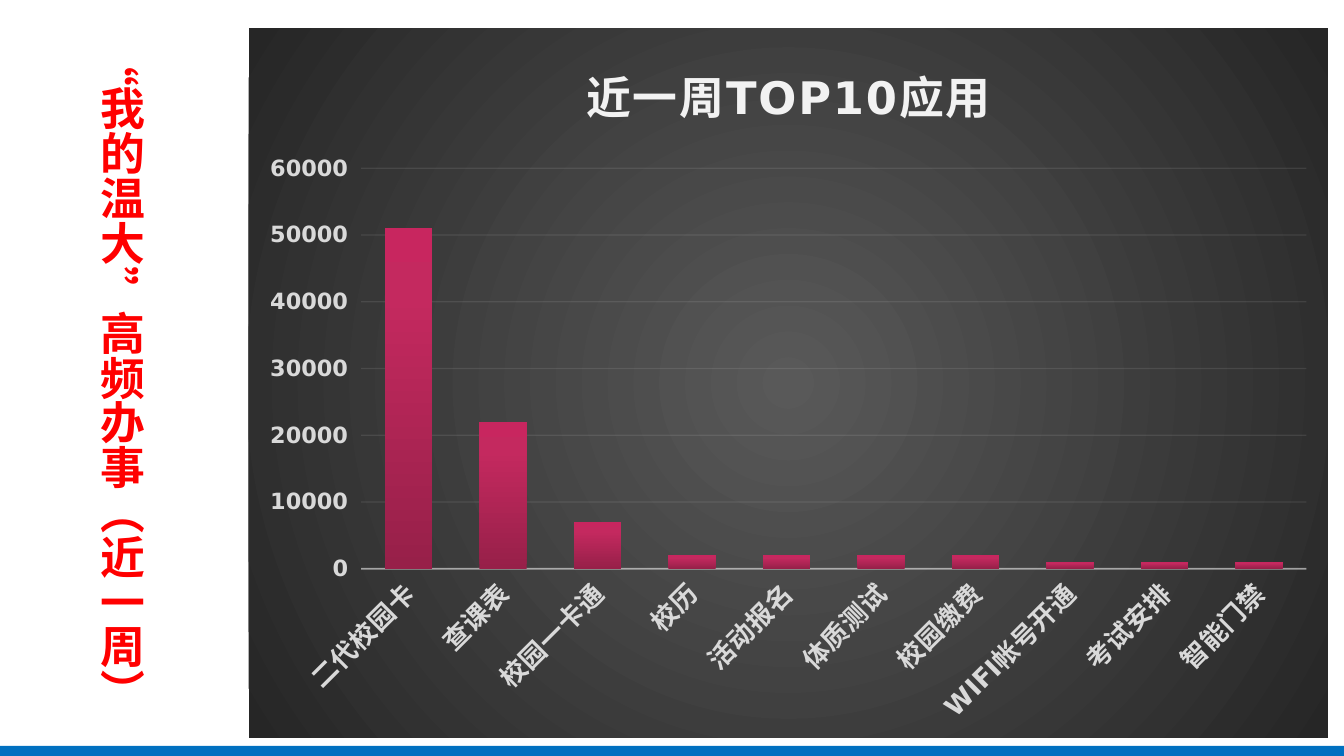
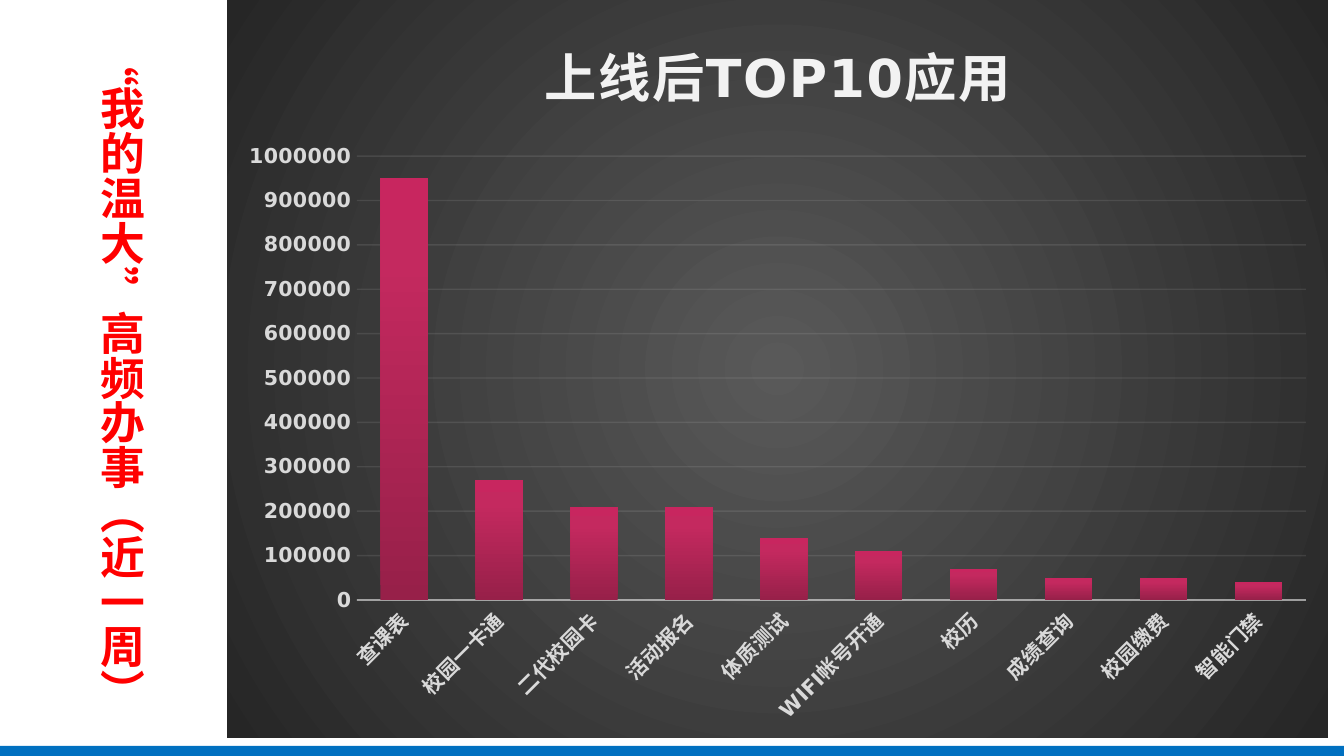
from lxml import etree
from pptx import Presentation
from pptx.chart.data import CategoryChartData
from pptx.dml.color import RGBColor
from pptx.enum.chart import XL_CHART_TYPE as ChartType, XL_TICK_MARK as TickMark
from pptx.enum.shapes import MSO_SHAPE as Preset
from pptx.enum.text import MSO_AUTO_SIZE as AutoSize
from pptx.oxml.ns import qn
from pptx.util import Pt

FONT = "DejaVu Sans"
BLUE, RED = "0070C0", "FF0000"
LIGHT, LABEL = "F2F2F2", "D9D9D9"
PANEL_STOPS = [(0, "595959"), (100, "262626")]
BAR_STOPS = [(0, "972049"), (80, "C4295F"), (100, "C8265F")]
SIDE_TITLE = "“我的温大”高频办事（近一周）"

CHARTS = [
    {
        "title": "近一周TOP10应用", "title_size": 24,
        "place": (133.2, 15.1, 578.2, 380.2),
        "category_size": 14, "value_size": 12,
        "maximum": 60000, "unit": 10000, "format": "0_ ",
        "apps": [("二代校园卡", 51000), ("查课表", 22000), ("校园一卡通", 7000),
                 ("校历", 2000), ("活动报名", 2000), ("体质测试", 2000),
                 ("校园缴费", 2000), ("WIFI帐号开通", 1000),
                 ("考试安排", 1000), ("智能门禁", 1000)],
    },
    {
        "title": "上线后TOP10应用", "title_size": 28,
        "place": (121.7, 0, 589.7, 395.3),
        "category_size": 11, "value_size": 11,
        "maximum": 1000000, "unit": 100000, "format": "General",
        "apps": [("查课表", 950000), ("校园一卡通", 270000), ("二代校园卡", 210000),
                 ("活动报名", 210000), ("体质测试", 140000), ("WIFI帐号开通", 110000),
                 ("校历", 70000), ("成绩查询", 50000),
                 ("校园缴费", 50000), ("智能门禁", 40000)],
    },
]


def color(value):
    return RGBColor.from_string(value)


def add_gradient(properties, stops, angle=None):
    gradient = etree.SubElement(properties, qn("a:gradFill"), rotWithShape="1")
    stop_list = etree.SubElement(gradient, qn("a:gsLst"))
    for position, value in stops:
        stop = etree.SubElement(stop_list, qn("a:gs"), pos=str(position * 1000))
        etree.SubElement(stop, qn("a:srgbClr"), val=value)
    if angle is None:
        shade = etree.SubElement(gradient, qn("a:path"), path="circle")
        center = {side: "50000" for side in "ltrb"}
        etree.SubElement(shade, qn("a:fillToRect"), **center)
    else:
        etree.SubElement(gradient, qn("a:lin"), ang=str(angle * 60000), scaled="0")


presentation = Presentation()
presentation.slide_width, presentation.slide_height = Pt(720), Pt(405)

for details in CHARTS:
    slide = presentation.slides.add_slide(presentation.slide_layouts[6])

    band = slide.shapes.add_shape(Preset.RECTANGLE, 0, Pt(399.6), Pt(720), Pt(5.4))
    band.shadow.inherit = False
    band.fill.solid()
    band.fill.fore_color.rgb = color(BLUE)
    band.line.fill.background()

    side_box = slide.shapes.add_textbox(Pt(37.4), Pt(15.1), Pt(43.9), Pt(391))
    text_frame = side_box.text_frame
    text_frame.word_wrap = True
    text_frame.auto_size = AutoSize.SHAPE_TO_FIT_TEXT
    text_frame._txBody.bodyPr.set("vert", "eaVert")
    text_frame.text = SIDE_TITLE
    side_font = text_frame.paragraphs[0].runs[0].font
    side_font.name, side_font.size, side_font.bold = FONT, Pt(24), True
    side_font.color.rgb = color(RED)

    data = CategoryChartData()
    data.categories = [name for name, visits in details["apps"]]
    data.add_series("Series 1", [visits for name, visits in details["apps"]])
    place = [Pt(length) for length in details["place"]]
    chart = slide.shapes.add_chart(ChartType.COLUMN_CLUSTERED, *place, data).chart
    chart.has_legend = False
    chart.font.name, chart.font.size = FONT, Pt(10)
    chart.font.color.rgb = color("000000")
    panel = etree.Element(qn("c:spPr"))
    add_gradient(panel, PANEL_STOPS)
    chart.element.find(qn("c:chart")).addnext(panel)

    chart.has_title = True
    chart.chart_title.include_in_layout = False
    chart.chart_title.text_frame.text = details["title"]
    title_font = chart.chart_title.text_frame.paragraphs[0].runs[0].font
    title_font.name, title_font.bold = FONT, True
    title_font.size = Pt(details["title_size"])
    title_font.color.rgb = color(LIGHT)
    title_font._element.set("spc", "100")

    plot = chart.plots[0]
    plot.gap_width, plot.overlap = 100, -24
    plot.vary_by_categories = False
    add_gradient(plot.series[0]._element.get_or_add_spPr(), BAR_STOPS, 270)

    category_axis, value_axis = chart.category_axis, chart.value_axis
    for axis, size in ((category_axis, details["category_size"]),
                       (value_axis, details["value_size"])):
        axis.major_tick_mark = axis.minor_tick_mark = TickMark.NONE
        label_font = axis.tick_labels.font
        label_font.name, label_font.size, label_font.bold = FONT, Pt(size), True
        label_font.color.rgb = color(LABEL)
    category_axis._element.find(qn("c:txPr")).find(qn("a:bodyPr")).set("rot", "-2700000")

    value_axis.minimum_scale, value_axis.maximum_scale = 0, details["maximum"]
    value_axis.major_unit = details["unit"]
    value_axis.tick_labels.number_format = details["format"]
    value_axis.tick_labels.number_format_is_linked = False
    value_axis.format.line.fill.background()
    value_axis.has_major_gridlines = True
    for line, width, opacity in ((category_axis.format.line, 1, 54),
                                 (value_axis.major_gridlines.format.line, 0.75, 10)):
        line.width = Pt(width)
        line.color.rgb = color(LIGHT)
        tint = line._get_or_add_ln().find(".//" + qn("a:srgbClr"))
        etree.SubElement(tint, qn("a:alpha"), val=str(opacity * 1000))

presentation.save("out.pptx")
